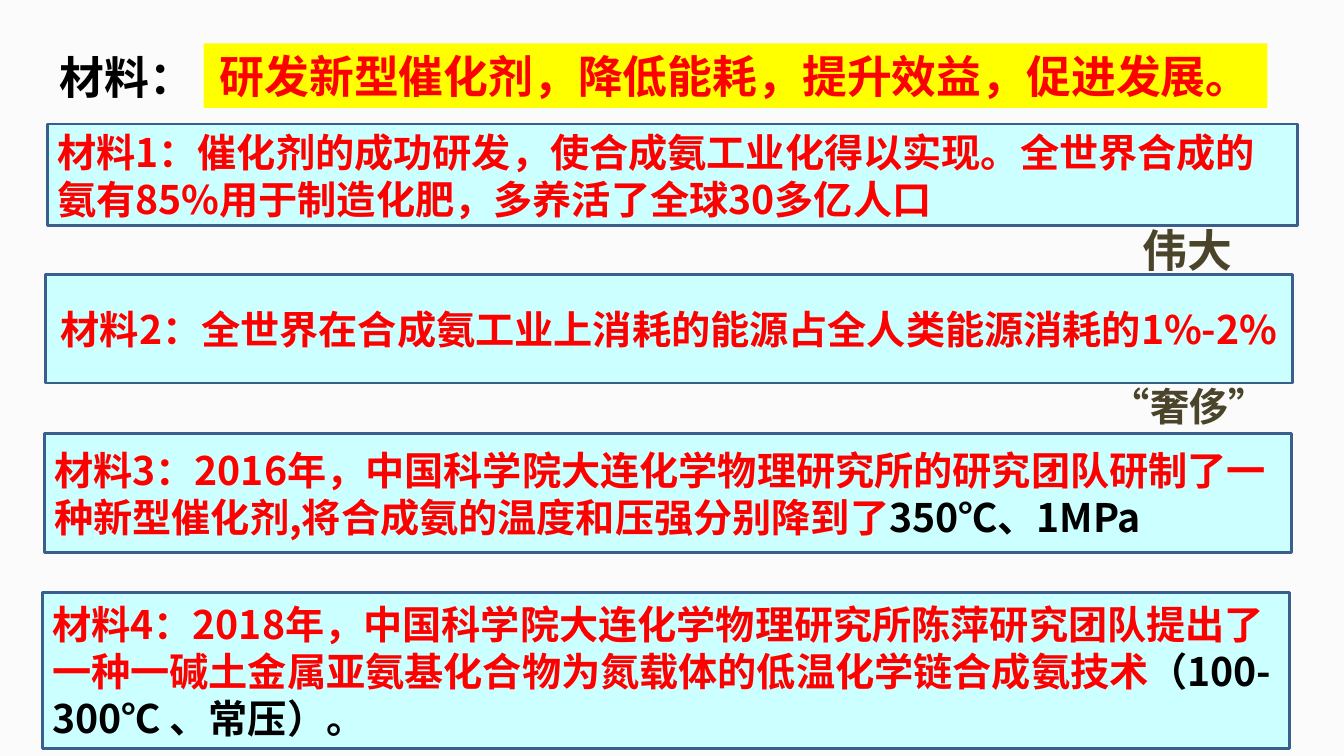
from lxml import etree
from pptx import Presentation
from pptx.dml.color import RGBColor
from pptx.enum import shapes, text
from pptx.oxml.ns import qn
from pptx.util import Inches, Pt

FONT = "Noto Sans CJK SC"
RED, BLACK, OLIVE = "FF0000", "000000", "4A452A"


def rgb(value):
    return RGBColor.from_string(value)


def write(shape, *runs, size=28, align=text.PP_ALIGN.LEFT,
          anchor=text.MSO_ANCHOR.MIDDLE, fit=text.MSO_AUTO_SIZE.NONE, spacing=None):
    """Fill a shape with one paragraph of (words, colour) runs."""
    frame = shape.text_frame
    frame.word_wrap = True
    frame.auto_size = fit
    frame.vertical_anchor = anchor
    paragraph = frame.paragraphs[0]
    paragraph.alignment = align
    paragraph.line_spacing = spacing
    for words, colour in runs:
        run = paragraph.add_run()
        run.text = words
        run.font.size = Pt(size)
        run.font.bold = True
        run.font.color.rgb = rgb(colour)
        run.font.name = FONT
        properties = run._r.get_or_add_rPr()
        properties.set("lang", "zh-CN")
        etree.SubElement(properties, qn("a:ea"), typeface=FONT)


prs = Presentation()
prs.slide_width, prs.slide_height = Inches(13.33), Inches(7.5)
slide = prs.slides.add_slide(prs.slide_layouts[5])
slide.background.fill.solid()
slide.background.fill.fore_color.rgb = rgb("FBFBFB")

# Heading
heading = slide.shapes.title
heading.left, heading.top = Inches(0.49), Inches(0.36)
heading.width, heading.height = Inches(10.5), Inches(0.64)
write(heading, ("材料：", BLACK), size=32, spacing=1.3)

# Yellow conclusion banner
banner = slide.shapes.add_shape(shapes.MSO_SHAPE.RECTANGLE, Inches(2.02), Inches(0.43),
                                Inches(10.55), Inches(0.64))
banner.shadow.inherit = False
banner.fill.solid()
banner.fill.fore_color.rgb = rgb("FFFF00")
banner.line.fill.background()
write(banner, ("研发新型催化剂，降低能耗，提升效益，促进发展。", RED), size=32,
      align=text.PP_ALIGN.CENTER, anchor=text.MSO_ANCHOR.TOP,
      fit=text.MSO_AUTO_SIZE.SHAPE_TO_FIT_TEXT)

# Four material panels: left, top, width, height, alignment, runs
LEFT, CENTER = text.PP_ALIGN.LEFT, text.PP_ALIGN.CENTER
materials = [
    (0.47, 1.23, 12.4, 1.01, LEFT,
     [("材料1：催化剂的成功研发，使合成氨工业化得以实现。全世界合成的氨有85%用于制造化肥，"
       "多养活了全球30多亿人口", RED)]),
    (0.45, 2.72, 12.37, 1.08, CENTER,
     [("材料2：全世界在合成氨工业上消耗的能源占全人类能源消耗的1%-2%", RED)]),
    (0.44, 4.3, 12.37, 1.18, LEFT,
     [("材料3：2016年，中国科学院大连化学物理研究所的研究团队研制了一种新型催化剂,"
       "将合成氨的温度和压强分别降到了", RED), ("350℃、1MPa", BLACK)]),
    (0.42, 5.88, 12.37, 1.55, LEFT,
     [("材料4：2018年，中国科学院大连化学物理研究所陈萍研究团队提出了一种一碱土金属亚氨基"
       "化合物为氮载体的低温化学链合成氨技术", RED), ("（100-300℃ 、常压）。", BLACK)]),
]
for left, top, width, height, align, runs in materials:
    panel = slide.shapes.add_shape(shapes.MSO_SHAPE.RECTANGLE, Inches(left), Inches(top),
                                   Inches(width), Inches(height))
    panel.shadow.inherit = False
    panel.fill.solid()
    panel.fill.fore_color.rgb = rgb("CCFFFF")
    panel.line.color.rgb = rgb("3A5F8C")
    panel.line.width = Pt(2)
    write(panel, *runs, align=align)

# Verdicts beneath the first two panels
verdicts = [("伟大", 32, 11.23, 2.16, 2.19, 0.64),
            ("“奢侈”", 28, 10.92, 3.74, 2.27, 0.57)]
for words, size, left, top, width, height in verdicts:
    verdict = slide.shapes.add_textbox(Inches(left), Inches(top), Inches(width), Inches(height))
    write(verdict, (words, OLIVE), size=size, anchor=text.MSO_ANCHOR.TOP,
          fit=text.MSO_AUTO_SIZE.SHAPE_TO_FIT_TEXT)

prs.save("out.pptx")
